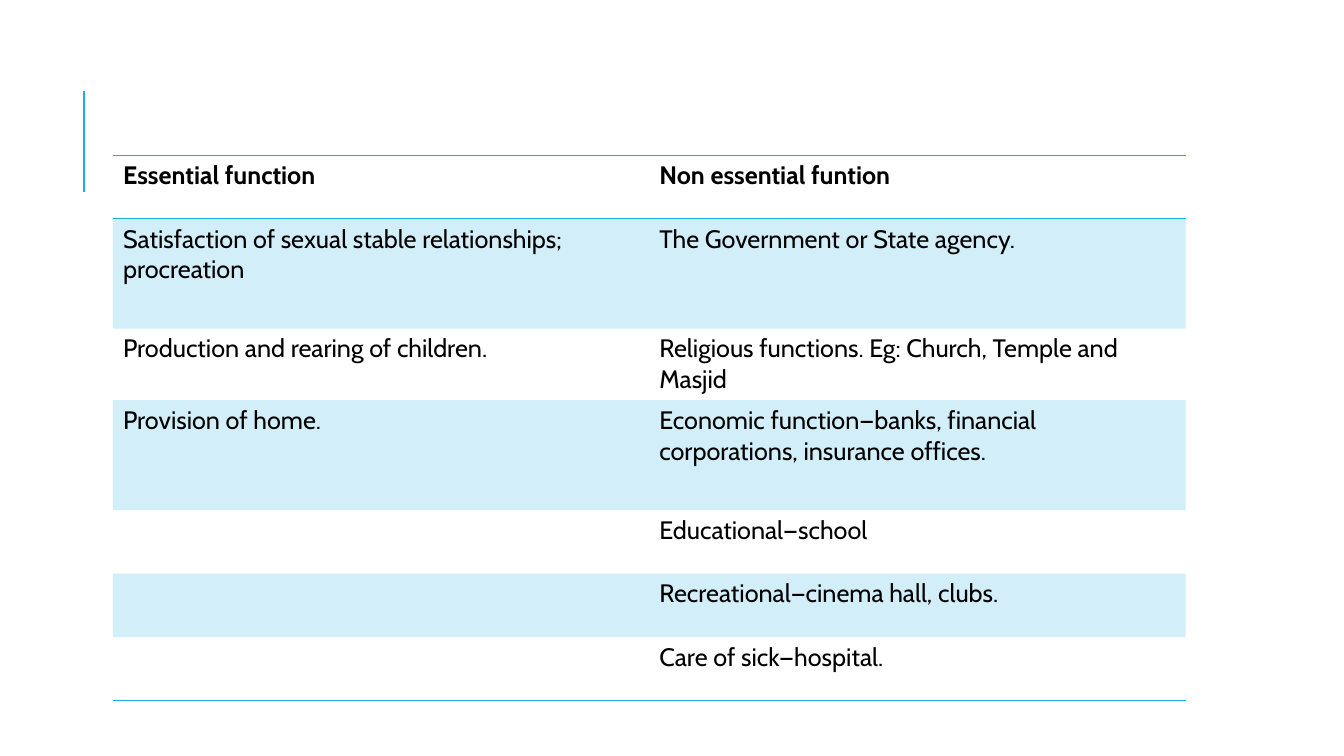
from lxml.etree import SubElement as Sub
from pptx import Presentation
from pptx.dml.color import RGBColor as RGB
from pptx.enum.shapes import MSO_CONNECTOR as Link
from pptx.oxml.ns import qn
from pptx.util import Inches, Pt

BLUE = RGB(0x1C, 0xAD, 0xE4)
BLACK = RGB(0, 0, 0)
FONT = "Cabin"
PLAIN = "{2D5ABB26-0587-4C30-8999-92F81FD0307C}"
LEFT, TOP, COL = 1.12, 1.54, 5.32
LOW, HIGH = 0.63, 1.09
ROWS = [
    (LOW, "Essential function", "Non essential funtion"),
    (HIGH, "Satisfaction of sexual stable relationships; procreation",
     "The Government or State agency."),
    (LOW, "Production and rearing of children.",
     "Religious functions. Eg: Church, Temple and Masjid"),
    (HIGH, "Provision of home.",
     "Economic function—banks, financial corporations, insurance offices."),
    (LOW, "", "Educational—school"),
    (LOW, "", "Recreational—cinema hall, clubs."),
    (LOW, "", "Care of sick—hospital."),
]


def write(frame, text, size=18, bold=False, color=BLACK):
    """Put formatted text in the first paragraph of a frame."""
    para = frame.paragraphs[0]
    para.font.size = Pt(size)
    if text:
        run = para.add_run()
        run.text = text
        font = run.font
        font.name, font.size, font.bold = FONT, Pt(size), bold
        font.color.rgb = color


def rule(cell, side):
    """Draw a thin blue border on one side of a cell."""
    edge = Sub(cell._tc.get_or_add_tcPr(), qn(f"a:{side}"), w=str(Pt(1)))
    Sub(Sub(edge, qn("a:solidFill")), qn("a:srgbClr"), val=str(BLUE))


def shade(cell):
    """Fill a cell with see-through blue."""
    cell.fill.solid()
    cell.fill.fore_color.rgb = BLUE
    tone = cell._tc.tcPr.find(".//" + qn("a:srgbClr"))
    Sub(tone, qn("a:alpha"), val="20000")


def bar(slide, x, top, end):
    """Draw the upright accent line."""
    line = slide.shapes.add_connector(
        Link.STRAIGHT, Inches(x), Inches(end), Inches(x), Inches(top))
    line.line.color.rgb = BLUE
    line.line.width = Pt(1.5)
    Sub(line._element.spPr, qn("a:effectLst"))


def grid(slide):
    """Build the table of functions."""
    high = sum(row[0] for row in ROWS)
    table = slide.shapes.add_table(
        len(ROWS), 2, Inches(LEFT), Inches(TOP),
        Inches(2 * COL), Inches(high)).table
    table._tbl.tblPr.find(qn("a:tableStyleId")).text = PLAIN
    for col in table.columns:
        col.width = Inches(COL)
    for i, (tall, *texts) in enumerate(ROWS):
        table.rows[i].height = Inches(tall)
        for cell, text in zip(table.rows[i].cells, texts):
            write(cell.text_frame, text, bold=i == 0)
            if i == 0:
                rule(cell, "lnT")
            if i in (0, len(ROWS) - 1):
                rule(cell, "lnB")
            if i % 2:
                shade(cell)
            else:
                cell.fill.background()


def main():
    """Make the slide and save it."""
    deck = Presentation()
    deck.slide_width, deck.slide_height = Inches(13.33), Inches(7.5)
    slide = deck.slides.add_slide(deck.slide_layouts[6])
    bar(slide, 0.83, 0.9, 1.9)
    grid(slide)
    deck.save("out.pptx")


if __name__ == "__main__":
    main()
